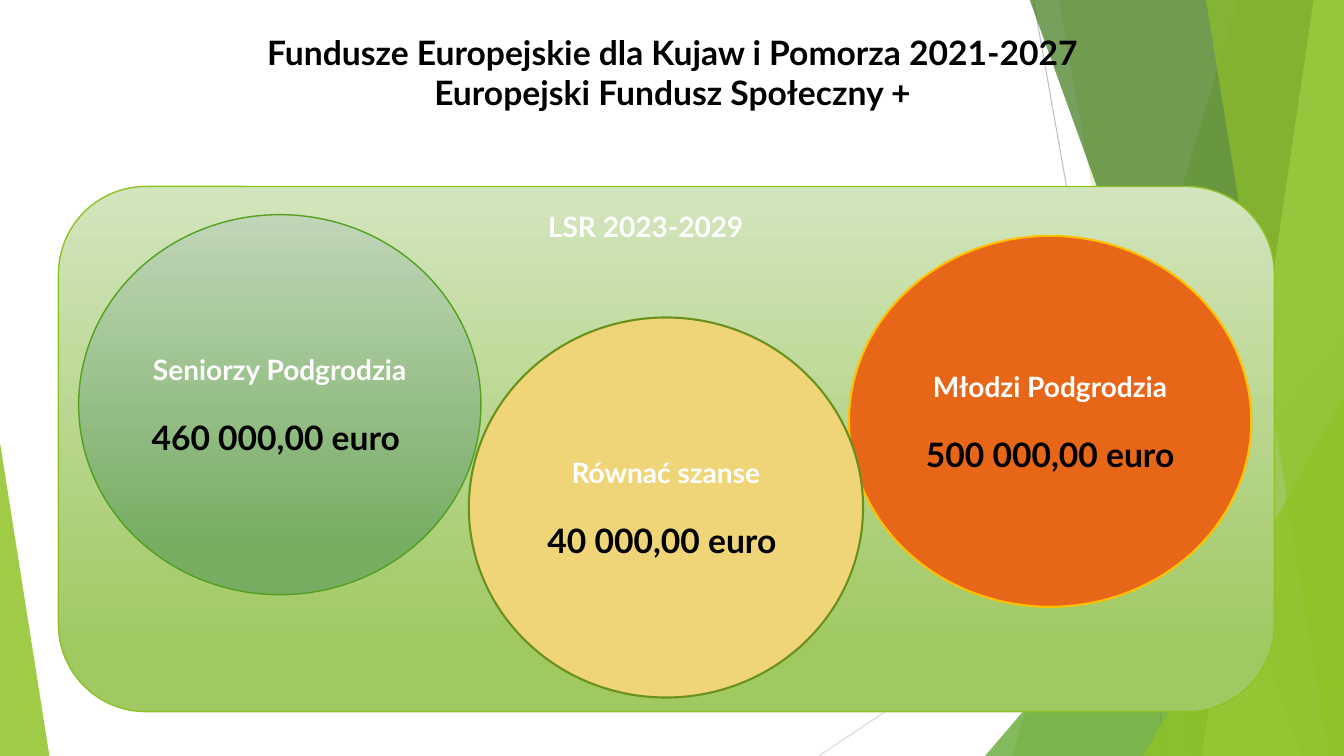
from dataclasses import dataclass

from lxml.etree import SubElement
from pptx import Presentation
from pptx.dml.color import RGBColor
from pptx.enum.shapes import MSO_CONNECTOR, MSO_SHAPE
from pptx.enum.text import MSO_ANCHOR, MSO_AUTO_SIZE, PP_ALIGN
from pptx.oxml.ns import qn
from pptx.util import Inches, Pt


@dataclass(frozen=True)
class Theme:
    """Colours, font and type sizes of the slide."""
    font: str = "Lato"
    big: int = 24
    small: int = 20
    gap: int = 22
    black: str = "000000"
    white: str = "FFFFFF"
    lime: str = "90C226"
    green: str = "54A021"
    forest: str = "3F7819"
    pale: str = "C0E474"
    olive: str = "6B901C"
    gold: str = "FFC000"
    sand: str = "F0D578"
    orange: str = "E76618"
    panel: tuple = ("D3E5BE", "A0C962")
    sage: tuple = ("C0D6B9", "76AD61")
    rules: tuple = ("BFBFBF", "D9D9D9")


def write(frame, text, size, color, font, first=True, before=0):
    """Write one bold centred paragraph."""
    para = frame.paragraphs[0] if first else frame.add_paragraph()
    para.text = text
    para.alignment = PP_ALIGN.CENTER
    para.space_before = Pt(before)
    for run in para.runs:
        run.font.name = font
        run.font.size = Pt(size)
        run.font.bold = True
        run.font.color.rgb = RGBColor.from_string(color)


class Deck:
    """Hold the theme and the current slide."""

    def __init__(self, theme):
        """Start a wide presentation with one titled slide."""
        self.theme = theme
        self.pres = Presentation()
        self.pres.slide_width = Inches(13.33)
        self.pres.slide_height = Inches(7.5)
        self.slide = self.pres.slides.add_slide(self.pres.slide_layouts[5])
        self.shapes = self.slide.shapes

    def paint(self, shape, fill, alpha=100, line=None, width=1):
        """Set the fill, outline and shadow of a shape."""
        shape.shadow.inherit = False
        if isinstance(fill, tuple):
            shape.fill.gradient()
            shape.fill.gradient_angle = 270
            for stop, color, place in zip(shape.fill.gradient_stops, fill, (0, 0.88)):
                stop.color.rgb = RGBColor.from_string(color)
                stop.position = place
        else:
            shape.fill.solid()
            shape.fill.fore_color.rgb = RGBColor.from_string(fill)
        if alpha < 100:
            tint = shape.element.spPr.find(qn("a:solidFill"))[0]
            SubElement(tint, qn("a:alpha")).set("val", str(alpha * 1000))
        if line:
            shape.line.color.rgb = RGBColor.from_string(line)
            shape.line.width = Pt(width)
        else:
            shape.line.fill.background()

    def rule(self, start, end, color):
        """Draw a thin straight line."""
        ends = [Inches(n) for n in (*start, *end)]
        line = self.shapes.add_connector(MSO_CONNECTOR.STRAIGHT, *ends)
        line.line.color.rgb = RGBColor.from_string(color)
        line.line.width = Pt(0.75)
        SubElement(line.element.spPr, qn("a:effectLst"))

    def band(self, top, base, color, alpha):
        """Fill from a slanted left edge to the right side of the slide."""
        pen = self.shapes.build_freeform(round(top * 100), -1, scale=Inches(0.01))
        pen.add_line_segments([(1333, -1), (1333, 750), (round(base * 100), 750)])
        self.paint(pen.convert_to_shape(), color, alpha)

    def shape(self, kind, box, fill, **look):
        """Add a painted preset shape."""
        shape = self.shapes.add_shape(kind, *(Inches(n) for n in box))
        self.paint(shape, fill, **look)
        return shape

    def wedge(self, box, tip, color, alpha):
        """Add a corner triangle with its tip at the given share of width."""
        shape = self.shape(MSO_SHAPE.ISOSCELES_TRIANGLE, box, color, alpha=alpha)
        shape.adjustments[0] = tip

    def title(self, text, box):
        """Place the title in front of the backdrop."""
        title = self.shapes.title
        self.shapes.element.append(title.element)
        title.left, title.top, title.width, title.height = (Inches(n) for n in box)
        frame = title.text_frame
        frame.auto_size = MSO_AUTO_SIZE.NONE
        frame.vertical_anchor = MSO_ANCHOR.MIDDLE
        write(frame, text, self.theme.big, self.theme.black, self.theme.font)

    def label(self, text, box):
        """Add a white caption."""
        frame = self.shapes.add_textbox(*(Inches(n) for n in box)).text_frame
        frame.word_wrap = True
        write(frame, text, self.theme.small, self.theme.white, self.theme.font)

    def fund(self, name, sum, box, fill, line, width):
        """Add a circle with a project name and its budget."""
        look = self.theme
        shape = self.shape(MSO_SHAPE.OVAL, box, fill, line=line, width=width)
        frame = shape.text_frame
        frame.vertical_anchor = MSO_ANCHOR.MIDDLE
        write(frame, name, look.small, look.white, look.font)
        write(frame, sum, look.big, look.black, look.font, first=False, before=look.gap)


def main():
    """Build and save the slide."""
    look = Theme()
    deck = Deck(look)

    deck.rule((10.25, 0), (11.58, 7.5), look.rules[0])
    deck.rule((13.33, 4.03), (8.12, 7.5), look.rules[1])
    deck.band(12.28, 10.04, look.lime, 30)
    deck.band(10.5, 11.83, look.lime, 20)
    deck.wedge((9.77, 3.33, 3.56, 4.17), 1, look.green, 72)
    deck.band(10.21, 12.91, look.forest, 70)
    deck.band(13.03, 11.92, look.pale, 70)
    deck.band(11.96, 13.18, look.lime, 65)
    deck.wedge((11.34, 3.93, 1.99, 3.57), 1, look.lime, 80)
    deck.wedge((0, 4.39, 0.49, 3.11), 0, look.lime, 85)

    deck.title("Fundusze Europejskie dla Kujaw i Pomorza 2021-2027\v"
               "Europejski Fundusz Społeczny +", (0.92, 0.25, 11.5, 0.93))
    deck.shape(MSO_SHAPE.ROUNDED_RECTANGLE, (0.58, 1.85, 12.06, 5.21),
               look.panel, line=look.lime)
    deck.fund("Seniorzy Podgrodzia", "460 000,00 euro ",
              (0.78, 2.13, 3.99, 3.77), look.sage, look.green, 1)
    deck.fund("Młodzi Podgrodzia", "500 000,00 euro",
              (8.42, 2.34, 3.99, 3.68), look.orange, look.gold, 1.5)
    deck.label("LSR 2023-2029", (3.86, 2.03, 5.09, 0.44))
    deck.fund("Równać szanse", "40 000,00 euro ",
              (4.65, 3.15, 3.91, 3.77), look.sand, look.olive, 1.5)
    deck.pres.save("out.pptx")


if __name__ == "__main__":
    main()
